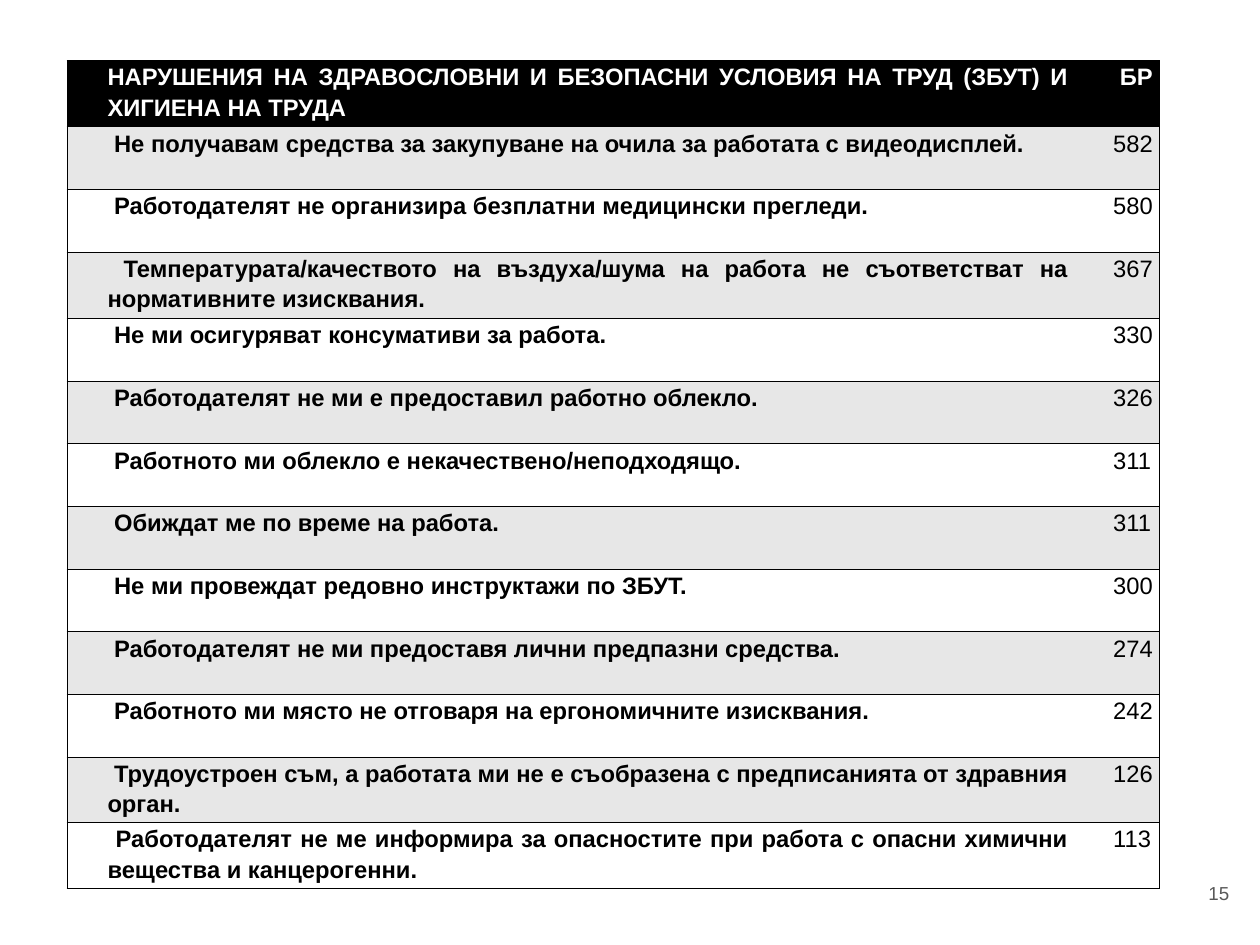
from dataclasses import dataclass

from lxml.etree import SubElement
from pptx import Presentation
from pptx.dml.color import RGBColor
from pptx.enum.text import MSO_ANCHOR, PP_ALIGN
from pptx.oxml.ns import qn
from pptx.table import _Cell
from pptx.text.text import _Paragraph
from pptx.util import Pt

BLACK, WHITE, GREY, NUMBER_GREY = "000000", "FFFFFF", "E7E7E7", "595959"
SHORT_ROW, TALL_ROW = 63.36, 66.96


@dataclass
class Violation:
    text: str
    count: str
    height: float = SHORT_ROW


HEADER = Violation(
    "НАРУШЕНИЯ НА ЗДРАВОСЛОВНИ И БЕЗОПАСНИ УСЛОВИЯ НА ТРУД (ЗБУТ) И ХИГИЕНА НА ТРУДА",
    " БР", TALL_ROW)
VIOLATIONS = [
    Violation(" Не получавам средства за закупуване на очила за работата с видеодисплей.", "582"),
    Violation(" Работодателят не организира безплатни медицински прегледи.", "580"),
    Violation(" Температурата/качеството на въздуха/шума на работа не съответстват на "
              "нормативните изисквания.", "367", TALL_ROW),
    Violation(" Не ми осигуряват консумативи за работа.", "330"),
    Violation(" Работодателят не ми е предоставил работно облекло.", "326"),
    Violation(" Работното ми облекло е некачествено/неподходящо.", "311"),
    Violation(" Обиждат ме по време на работа.", "311"),
    Violation(" Не ми провеждат редовно инструктажи по ЗБУТ.", "300"),
    Violation(" Работодателят не ми предоставя лични предпазни средства.", "274"),
    Violation(" Работното ми място не отговаря на ергономичните изисквания.", "242"),
    Violation(" Трудоустроен съм, а работата ми не е съобразена с предписанията от "
              "здравния орган.", "126"),
    Violation(" Работодателят не ме информира за опасностите при работа с опасни "
              "химични вещества и канцерогенни.", "113", TALL_ROW),
]


def color(value: str) -> RGBColor:
    return RGBColor.from_string(value)


def format_text(p: _Paragraph, size: float, hex_color: str, bold: bool = False) -> None:
    for r in p.runs:
        r.font.name = "Arial"
        r.font.size = Pt(size)
        r.font.bold = bold
        r.font.color.rgb = color(hex_color)


def set_borders(cell: _Cell, open_side: str) -> None:
    tcPr = cell._tc.get_or_add_tcPr()
    for i, side in enumerate(("lnL", "lnR", "lnT", "lnB")):
        ln = SubElement(tcPr, qn(f"a:{side}"), w=str(Pt(1)))
        if side == open_side:
            SubElement(ln, qn("a:noFill"))
        else:
            fill = SubElement(ln, qn("a:solidFill"))
            SubElement(fill, qn("a:srgbClr"), val=BLACK)
        tcPr.insert(i, ln)


def fill_cell(cell: _Cell, text: str, fill: str, hex_color: str, bold: bool,
              open_side: str) -> None:
    cell.margin_left = cell.margin_right = Pt(5)
    cell.margin_top = cell.margin_bottom = Pt(0)
    cell.fill.solid()
    cell.fill.fore_color.rgb = color(fill)
    set_borders(cell, open_side)
    p = cell.text_frame.paragraphs[0]
    p.text = text
    p.alignment = PP_ALIGN.JUSTIFY
    p.line_spacing = 1.15
    p._p.get_or_add_pPr().set("marL", str(Pt(36)))
    format_text(p, 24, hex_color, bold)


def main() -> None:
    prs = Presentation()
    prs.slide_width, prs.slide_height = Pt(1273.68), Pt(955.44)
    s = prs.slides.add_slide(prs.slide_layouts[6])

    tb = s.shapes.add_textbox(Pt(1180.08), Pt(866.16), Pt(76.32), Pt(73.44))
    tf = tb.text_frame
    tf.word_wrap = True
    tf.vertical_anchor = MSO_ANCHOR.MIDDLE
    tf.margin_left = tf.margin_right = tf.margin_top = tf.margin_bottom = Pt(13.68)
    tf.text = "15"
    tf.paragraphs[0].alignment = PP_ALIGN.RIGHT
    format_text(tf.paragraphs[0], 19, NUMBER_GREY)

    rows = [HEADER, *VIOLATIONS]
    widths = (1016.64, 87.84)
    table = s.shapes.add_table(len(rows), len(widths), Pt(67.68), Pt(61.2), Pt(sum(widths)),
                               Pt(sum(row.height for row in rows))).table
    table.horz_banding = False
    for column, width in zip(table.columns, widths):
        column.width = Pt(width)
    for i, row in enumerate(rows):
        table.rows[i].height = Pt(row.height)
        is_header = i == 0
        fill = BLACK if is_header else GREY if i % 2 else WHITE
        hex_color = WHITE if is_header else BLACK
        fill_cell(table.cell(i, 0), row.text, fill, hex_color, True, "lnR")
        fill_cell(table.cell(i, 1), row.count, fill, hex_color, is_header, "lnL")

    prs.save("out.pptx")


if __name__ == "__main__":
    main()
